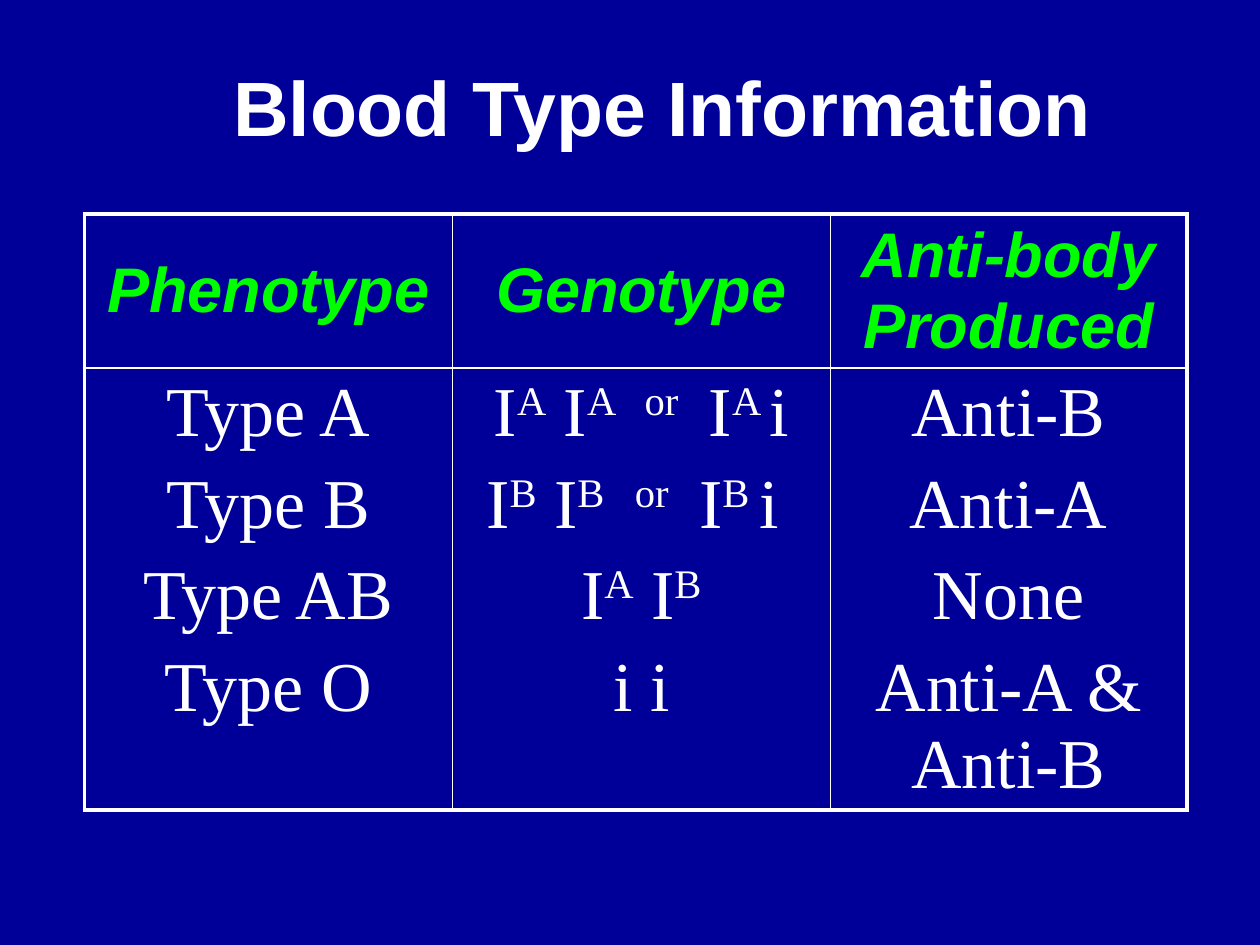
from dataclasses import dataclass

from lxml import etree
from pptx import Presentation
from pptx.dml.color import RGBColor
from pptx.enum.text import MSO_ANCHOR, PP_ALIGN
from pptx.oxml.ns import qn
from pptx.util import Inches, Pt

CENTER, LEFT = PP_ALIGN.CENTER, PP_ALIGN.LEFT
TOP, MIDDLE = MSO_ANCHOR.TOP, MSO_ANCHOR.MIDDLE
TITLE_ONLY = 5


@dataclass(frozen=True)
class TextStyle:
    """Look of one kind of text."""
    font: str
    size: float
    color: str
    bold: bool = False
    italic: bool = False


@dataclass(frozen=True)
class Theme:
    """Colours, type and line widths of the slide."""
    background: str = "000099"
    line: str = "FFFFFF"
    outer_line: float = 2.25
    inner_line: float = 1
    title: TextStyle = TextStyle("Arial", 44, "FFFFFF", bold=True)
    header: TextStyle = TextStyle("Arial", 36, "00FF00", bold=True, italic=True)
    body: TextStyle = TextStyle("Times New Roman", 40, "FFFFFF")


THEME = Theme()
COLUMN_WIDTHS = (2.92, 3, 2.83)
ROW_HEIGHTS = (1.22, 3.51)
HEADERS = ("Phenotype", "Genotype", "Anti-body Produced")
PHENOTYPES = (("Type A",), ("Type B",), ("Type AB",), ("Type O",))
GENOTYPES = (
    ("I", "A", " I", "A   or   ", "I", "A ", "i"),
    ("I", "B", " I", "B   or   ", "I", "B ", "i "),
    ("I", "A", " I", "B"),
    ("i i",),
)
ANTIBODIES = (("Anti-B",), ("Anti-A",), ("None",), ("Anti-A & Anti-B",))


def add_run(paragraph, text, style, raised=False):
    """Add one styled run, raised when it is a superscript."""
    run = paragraph.add_run()
    run.text = text
    font = run.font
    font.name, font.size = style.font, Pt(style.size)
    font.bold, font.italic = style.bold, style.italic
    font.color.rgb = RGBColor.from_string(style.color)
    if raised:
        run._r.get_or_add_rPr().set("baseline", "30000")


def set_borders(cell, widths):
    """Draw the cell's sides, given as a width in points for each tag."""
    properties = cell._tc.get_or_add_tcPr()
    for side, width in widths.items():
        line = etree.SubElement(properties, qn(f"a:{side}"), w=str(Pt(width)))
        fill = etree.SubElement(line, qn("a:solidFill"))
        etree.SubElement(fill, qn("a:srgbClr"), val=THEME.line)


def fill_cell(cell, lines, style, anchor):
    """Write centred lines whose runs alternate between normal and superscript."""
    cell.fill.background()
    cell.vertical_anchor = anchor
    frame = cell.text_frame
    for index, runs in enumerate(lines):
        paragraph = frame.add_paragraph() if index else frame.paragraphs[0]
        paragraph.alignment = CENTER
        paragraph.space_before = Pt(style.size * 0.2)
        for position, text in enumerate(runs):
            add_run(paragraph, text, style, raised=position % 2 == 1)


def add_title(slide, text):
    """Place the slide title."""
    title = slide.shapes.title
    title.left, title.top = Inches(1.75), Inches(0.42)
    title.width, title.height = Inches(7.06), Inches(0.83)
    frame = title.text_frame
    frame.word_wrap = False
    frame.vertical_anchor = TOP
    frame.paragraphs[0].alignment = LEFT
    add_run(frame.paragraphs[0], text, THEME.title)


def add_blood_type_table(slide):
    """Add the table of phenotypes, genotypes and antibodies."""
    table = slide.shapes.add_table(
        len(ROW_HEIGHTS), len(COLUMN_WIDTHS), Inches(0.67), Inches(1.7),
        Inches(sum(COLUMN_WIDTHS)), Inches(sum(ROW_HEIGHTS))).table
    table.first_row = table.horz_banding = False
    for column, width in zip(table.columns, COLUMN_WIDTHS):
        column.width = Inches(width)
    for row, height in zip(table.rows, ROW_HEIGHTS):
        row.height = Inches(height)
    rows = (
        ([[(header,)] for header in HEADERS], THEME.header, MIDDLE),
        ((PHENOTYPES, GENOTYPES, ANTIBODIES), THEME.body, TOP),
    )
    for r, (contents, style, anchor) in enumerate(rows):
        for c, lines in enumerate(contents):
            outer_sides = {"lnL": c == 0, "lnR": c == len(contents) - 1,
                           "lnT": r == 0, "lnB": r == len(rows) - 1}
            cell = table.cell(r, c)
            set_borders(cell, {
                side: THEME.outer_line if outer else THEME.inner_line
                for side, outer in outer_sides.items()})
            fill_cell(cell, lines, style, anchor)


def main():
    """Build and save the slide."""
    presentation = Presentation()
    presentation.slide_width, presentation.slide_height = Inches(10), Inches(7.5)
    slide = presentation.slides.add_slide(presentation.slide_layouts[TITLE_ONLY])
    background = slide.background.fill
    background.solid()
    background.fore_color.rgb = RGBColor.from_string(THEME.background)
    add_blood_type_table(slide)
    add_title(slide, "Blood Type Information")
    presentation.save("out.pptx")


if __name__ == "__main__":
    main()
